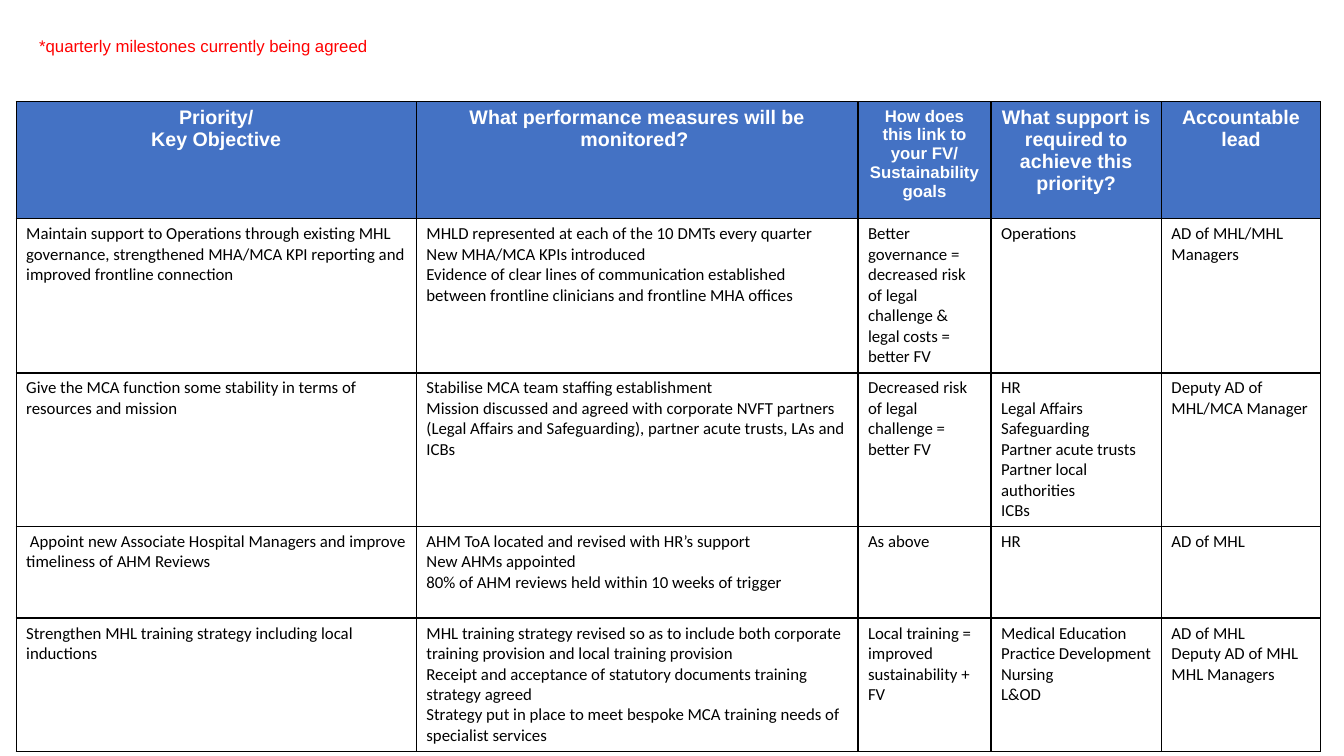
import pptx
import pptx.util
import pptx.dml.color
import pptx.enum.text
import pptx.oxml
import pptx.oxml.ns

Inches = pptx.util.Inches
Pt = pptx.util.Pt
RGBColor = pptx.dml.color.RGBColor
WHITE = RGBColor(0xFF, 0xFF, 0xFF)
BLACK = RGBColor(0, 0, 0)
RED = RGBColor(0xFF, 0, 0)
BLUE = RGBColor(0x44, 0x72, 0xC4)

COLUMN_WIDTHS = [3.97, 4.38, 1.32, 1.69, 1.58]
ROW_HEIGHTS = [1.16, 1.53, 1.52, 0.91, 1.32]
HEADER_SIZES = [14, 14, 12, 14, 14]
PRIORITIES = [
    [
        "Priority/\nKey Objective",
        "What performance measures will be monitored? ",
        "How does this link to your FV/\nSustainability goals",
        "What support is required to achieve this priority?",
        "Accountable lead",
    ],
    [
        "Maintain support to Operations through existing MHL governance, "
        "strengthened MHA/MCA KPI reporting and improved frontline connection",
        "MHLD represented at each of the 10 DMTs every quarter\n"
        "New MHA/MCA KPIs introduced\n"
        "Evidence of clear lines of communication established between "
        "frontline clinicians and frontline MHA offices",
        "Better governance = decreased risk of legal challenge & legal costs = better FV",
        "Operations",
        "AD of MHL/MHL Managers",
    ],
    [
        "Give the MCA function some stability in terms of resources and mission",
        "Stabilise MCA team staffing establishment\n"
        "Mission discussed and agreed with corporate NVFT partners "
        "(Legal Affairs and Safeguarding), partner acute trusts, LAs and ICBs",
        "Decreased risk of legal challenge = better FV",
        "HR\nLegal Affairs\nSafeguarding\nPartner acute trusts\n"
        "Partner local authorities\nICBs",
        "Deputy AD of MHL/MCA Manager",
    ],
    [
        " Appoint new Associate Hospital Managers and improve timeliness of AHM Reviews",
        "AHM ToA located and revised with HR’s support\n"
        "New AHMs appointed\n"
        "80% of AHM reviews held within 10 weeks of trigger",
        "As above",
        "HR",
        "AD of MHL",
    ],
    [
        "Strengthen MHL training strategy including local inductions",
        "MHL training strategy revised so as to include both corporate "
        "training provision and local training provision\n"
        "Receipt and acceptance of statutory documents training strategy agreed\n"
        "Strategy put in place to meet bespoke MCA training needs of specialist services",
        "Local training = improved sustainability + FV",
        "Medical Education\nPractice Development Nursing\nL&OD",
        "AD of MHL\nDeputy AD of MHL\nMHL Managers",
    ],
]


def format_runs(text_frame, font_name, size, color, bold=False):
    for paragraph in text_frame.paragraphs:
        for run in paragraph.runs:
            run.font.name = font_name
            run.font.size = Pt(size)
            run.font.color.rgb = color
            run.font.bold = bold


def add_borders(cell):
    properties = cell._tc.get_or_add_tcPr()
    for position, side in enumerate(["lnL", "lnR", "lnT", "lnB"]):
        border = pptx.oxml.parse_xml(
            f'<a:{side} {pptx.oxml.ns.nsdecls("a")} w="{Pt(1)}">'
            f'<a:solidFill><a:srgbClr val="{BLACK}"/></a:solidFill></a:{side}>'
        )
        properties.insert(position, border)


presentation = pptx.Presentation()
presentation.slide_width = Inches(13.33)
presentation.slide_height = Inches(7.5)
slide = presentation.slides.add_slide(presentation.slide_layouts[6])

plan = slide.shapes.add_table(
    len(ROW_HEIGHTS), len(COLUMN_WIDTHS),
    Inches(0.16), Inches(1.01), Inches(sum(COLUMN_WIDTHS)), Inches(sum(ROW_HEIGHTS)),
).table
plan.horz_banding = False
for column, width in zip(plan.columns, COLUMN_WIDTHS):
    column.width = Inches(width)

for row, height, texts in zip(plan.rows, ROW_HEIGHTS, PRIORITIES):
    row.height = Inches(height)
    is_header = texts is PRIORITIES[0]
    for cell, text, header_size in zip(row.cells, texts, HEADER_SIZES):
        cell.text_frame.text = text
        add_borders(cell)
        cell.fill.solid()
        if is_header:
            cell.fill.fore_color.rgb = BLUE
            format_runs(cell.text_frame, "Arial", header_size, WHITE, True)
            for paragraph in cell.text_frame.paragraphs:
                paragraph.alignment = pptx.enum.text.PP_ALIGN.CENTER
        else:
            cell.fill.fore_color.rgb = WHITE
            format_runs(cell.text_frame, "Calibri", 12, BLACK)

milestone_note = slide.shapes.add_textbox(Inches(0.29), Inches(0.31), Inches(9.07), Inches(0.3))
milestone_note.text_frame.word_wrap = True
milestone_note.text_frame.auto_size = pptx.enum.text.MSO_AUTO_SIZE.SHAPE_TO_FIT_TEXT
milestone_note.text_frame.text = "*quarterly milestones currently being agreed"
format_runs(milestone_note.text_frame, "Arial", 12, RED)

presentation.save("out.pptx")
